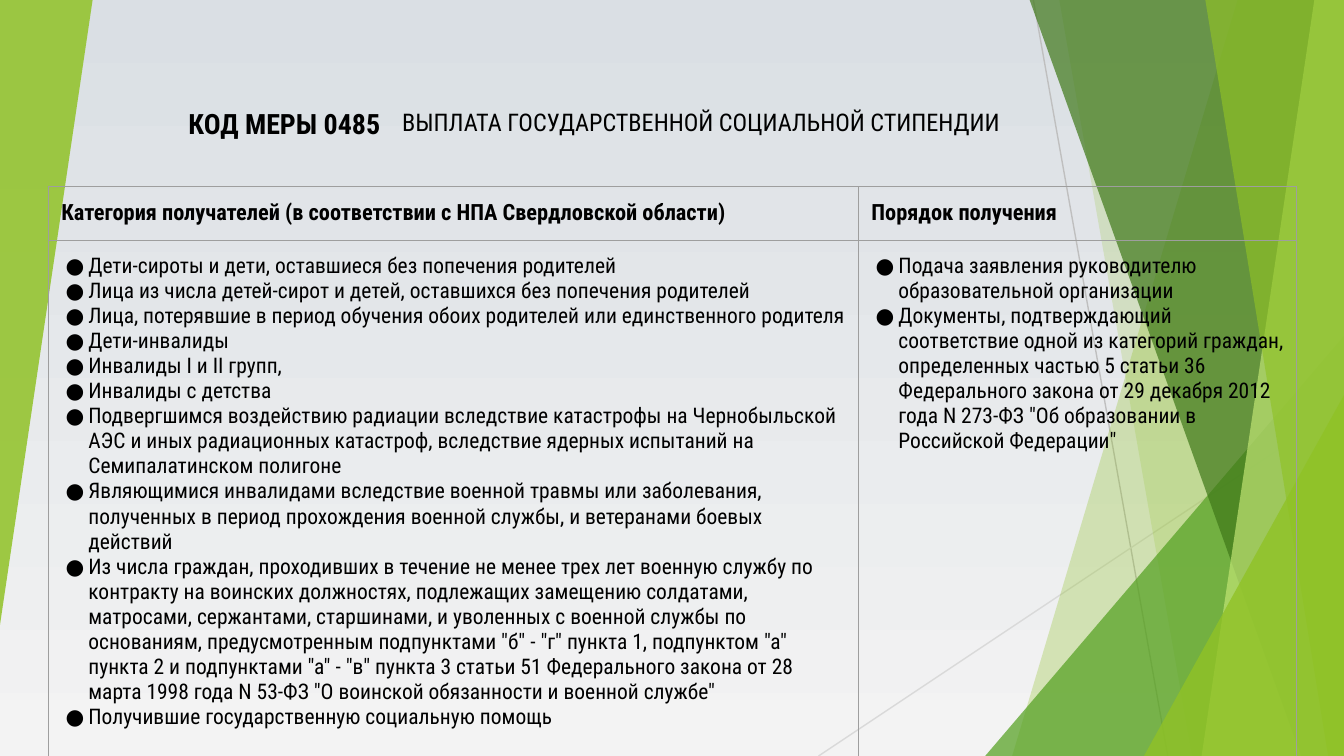
"""Build a slide on the state social stipend: a heading, a table and green facets."""
from dataclasses import dataclass

from lxml import etree
from pptx import Presentation
from pptx import util as u
from pptx.dml import color
from pptx.enum import shapes, text
from pptx.oxml import ns


@dataclass(frozen=True)
class Theme:
    font: str = "Roboto Condensed"
    ink: str = "000000"
    rule: str = "9E9E9E"
    top: str = "DADFE4"
    base: str = "F3F3F3"
    lime: str = "90C226"
    leaf: str = "54A021"
    moss: str = "3F7819"
    pale: str = "C0E474"
    code: float = 15
    title: float = 13
    head: float = 12
    body: float = 11.5
    thin: float = 0.75


@dataclass(frozen=True)
class Ray:
    start: tuple[float, float]
    end: tuple[float, float]
    hue: str


@dataclass(frozen=True)
class Facet:
    top: float
    foot: float
    hue: str
    alpha: int


@dataclass(frozen=True)
class Wedge:
    box: tuple[float, float, float, float]
    hue: str
    alpha: int
    turn: int = 0


@dataclass(frozen=True)
class Column:
    width: float
    head: str
    items: tuple[str, ...]


T = Theme()
WIDE, HIGH = 25.4, 14.29
RAYS = (
    Ray((19.53, 0), (22.07, HIGH), "BFBFBF"),
    Ray((WIDE, 7.67), (15.47, HIGH), "D9D9D9"),
)
DECOR = (
    Facet(23.39, 19.13, T.lime, 30),
    Facet(20.02, 22.53, T.lime, 20),
    Wedge((18.62, 6.35, 6.78, 7.94), T.leaf, 72),
    Facet(19.46, 24.59, T.moss, 70),
    Facet(24.84, 22.71, T.pale, 70),
    Facet(22.78, 25.1, T.lime, 65),
    Wedge((21.62, 7.47, 3.78, 6.82), T.lime, 80),
    Wedge((0, 0, 1.75, 11.81), T.lime, 85, 180),
)
COLUMNS = (
    Column(15.31, "Категория получателей (в соответствии с НПА Свердловской области)", (
        "Дети-сироты и дети, оставшиеся без попечения родителей",
        "Лица из числа детей-сирот и детей, оставшихся без попечения родителей",
        "Лица, потерявшие в период обучения обоих родителей или единственного родителя",
        "Дети-инвалиды",
        "Инвалиды I и II групп,",
        "Инвалиды с детства",
        "Подвергшимся воздействию радиации вследствие катастрофы на Чернобыльской АЭС "
        "и иных радиационных катастроф, вследствие ядерных испытаний на "
        "Семипалатинском полигоне",
        "Являющимися инвалидами вследствие военной травмы или заболевания, полученных "
        "в период прохождения военной службы, и ветеранами боевых действий",
        "Из числа граждан, проходивших в течение не менее трех лет военную службу по "
        "контракту на воинских должностях, подлежащих замещению солдатами, матросами, "
        "сержантами, старшинами, и уволенных с военной службы по основаниям, "
        'предусмотренным подпунктами "б" - "г" пункта 1, подпунктом "а" пункта 2 и '
        'подпунктами "а" - "в" пункта 3 статьи 51 Федерального закона от 28 марта '
        '1998 года N 53-ФЗ "О воинской обязанности и военной службе"',
        "Получившие государственную социальную помощь",
    )),
    Column(8.29, "Порядок получения", (
        "Подача заявления руководителю образовательной организации",
        "Документы, подтверждающий соответствие одной из категорий граждан, "
        "определенных частью 5 статьи 36 Федерального закона от 29 декабря 2012 года "
        'N 273-ФЗ "Об образовании в Российской Федерации"',
    )),
)


def rgb(hue: str) -> color.RGBColor:
    return color.RGBColor.from_string(hue)


def add(node, tag: str, **attrs: str):
    return etree.SubElement(node, ns.qn(tag), attrs)


def write(para, words: str, size: float, bold: bool = False) -> None:
    run = para.add_run()
    run.text = words
    font = run.font
    font.name, font.size, font.bold = T.font, u.Pt(size), bold
    font.color.rgb = rgb(T.ink)


def inset(frame, side: float, edge: float) -> None:
    frame.margin_left = frame.margin_right = u.Cm(side)
    frame.margin_top = frame.margin_bottom = u.Cm(edge)


def tint(shape, hue: str, alpha: int) -> None:
    shape.shadow.inherit = False
    shape.fill.solid()
    shape.fill.fore_color.rgb = rgb(hue)
    shape.line.fill.background()
    tone = next(shape._element.spPr.iter(ns.qn("a:srgbClr")))
    add(tone, "a:alpha", val=str(alpha * 1000))


def draw_ray(slide, ray: Ray) -> None:
    ends = [u.Cm(v) for v in ray.start + ray.end]
    line = slide.shapes.add_connector(shapes.MSO_CONNECTOR.STRAIGHT, *ends)
    line.line.color.rgb = rgb(ray.hue)
    line.line.width = u.Pt(T.thin)
    add(line._element.spPr, "a:effectLst")


def draw_facet(slide, facet: Facet) -> None:
    pen = slide.shapes.build_freeform(u.Cm(facet.top), 0)
    spots = ((WIDE, 0), (WIDE, HIGH), (facet.foot, HIGH))
    pen.add_line_segments([(u.Cm(x), u.Cm(y)) for x, y in spots])
    tint(pen.convert_to_shape(), facet.hue, facet.alpha)


def draw_wedge(slide, wedge: Wedge) -> None:
    box = [u.Cm(v) for v in wedge.box]
    shape = slide.shapes.add_shape(shapes.MSO_SHAPE.ISOSCELES_TRIANGLE, *box)
    shape.adjustments[0] = 1
    shape.rotation = wedge.turn
    tint(shape, wedge.hue, wedge.alpha)


def bullet(para) -> None:
    props = para._p.get_or_add_pPr()
    props.set("marL", str(u.Cm(0.51)))
    props.set("indent", str(-u.Cm(0.43)))
    add(add(props, "a:buClr"), "a:srgbClr", val=T.ink)
    add(props, "a:buFont", typeface=T.font)
    add(props, "a:buChar", char="●")


def style(cell) -> None:
    inset(cell, 0.25, 0.25)
    props = cell._tc.get_or_add_tcPr()
    for side in "LRTB":
        edge = add(props, f"a:ln{side}", w=str(u.Pt(T.thin)))
        add(add(edge, "a:solidFill"), "a:srgbClr", val=T.rule)
    cell.fill.background()


def draw_table(slide) -> None:
    rows = (0.97, 9.27)
    width = sum(col.width for col in COLUMNS)
    frame = slide.shapes.add_table(len(rows), len(COLUMNS), u.Cm(0.91), u.Cm(3.53),
                                   u.Cm(width), u.Cm(sum(rows)))
    table = frame.table
    table.first_row = table.horz_banding = False
    for row, height in zip(table.rows, rows):
        row.height = u.Cm(height)
    for i, col in enumerate(COLUMNS):
        table.columns[i].width = u.Cm(col.width)
        head, body = table.cell(0, i), table.cell(1, i)
        style(head)
        style(body)
        write(head.text_frame.paragraphs[0], col.head, T.head, True)
        for n, item in enumerate(col.items):
            frame = body.text_frame
            para = frame.add_paragraph() if n else frame.paragraphs[0]
            bullet(para)
            write(para, item, T.body)


def draw_code(slide) -> None:
    box = slide.shapes.add_textbox(u.Cm(2.08), u.Cm(1.35), u.Cm(5.36), u.Cm(1.96))
    frame = box.text_frame
    frame.word_wrap = True
    frame.vertical_anchor = text.MSO_ANCHOR.MIDDLE
    inset(frame, 0.25, 0.25)
    para = frame.paragraphs[0]
    para.alignment = text.PP_ALIGN.RIGHT
    write(para, "КОД МЕРЫ 0485", T.code, True)


def draw_title(slide) -> None:
    title = slide.shapes.title
    title.left, title.top = u.Cm(7.42), u.Cm(1.35)
    title.width, title.height = u.Cm(16), u.Cm(1.96)
    frame = title.text_frame
    frame.auto_size = text.MSO_AUTO_SIZE.NONE
    frame.vertical_anchor = text.MSO_ANCHOR.MIDDLE
    inset(frame, 0.18, 0.1)
    para = frame.paragraphs[0]
    para.alignment, para.line_spacing = text.PP_ALIGN.LEFT, 0.9
    write(para, "ВЫПЛАТА ГОСУДАРСТВЕННОЙ СОЦИАЛЬНОЙ СТИПЕНДИИ", T.title)
    slide.shapes._spTree.append(title._element)


def main() -> None:
    deck = Presentation()
    deck.slide_width, deck.slide_height = u.Cm(WIDE), u.Cm(HIGH)
    slide = deck.slides.add_slide(deck.slide_layouts[5])
    fill = slide.background.fill
    fill.gradient()
    fill.gradient_angle = 270
    for stop, hue in zip(fill.gradient_stops, (T.top, T.base)):
        stop.color.rgb = rgb(hue)
    for ray in RAYS:
        draw_ray(slide, ray)
    for part in DECOR:
        (draw_facet if isinstance(part, Facet) else draw_wedge)(slide, part)
    draw_code(slide)
    draw_table(slide)
    draw_title(slide)
    deck.save("out.pptx")


if __name__ == "__main__":
    main()
